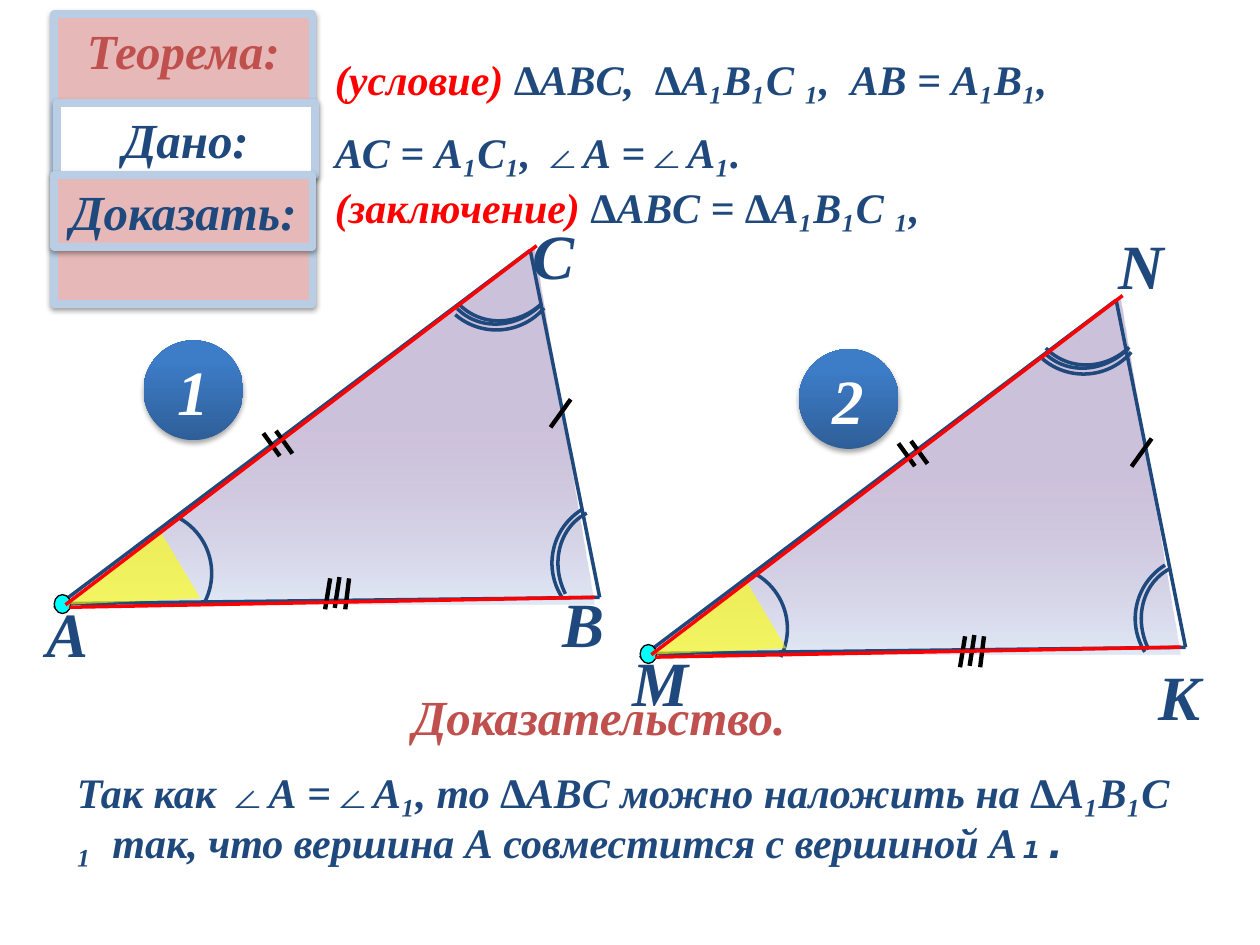
from lxml import etree
from pptx import Presentation
from pptx import util as u
from pptx.dml.color import RGBColor
from pptx.enum import shapes, text
from pptx.oxml.ns import qn

NAVY, RED, BRICK, BLACK = "1F497D", "FF0000", "C0504D", "000000"
PINK, WHITE, FRAME = "E6B9B8", "FFFFFF", "B9CDE5"
SERIF, MONO = "Times New Roman", "DejaVu Sans Mono"

HEADINGS = [
    ("Теорема:", (31, 8), PINK, BRICK),
    ("Дано:", (32.4, 59), WHITE, NAVY),
    ("Доказать:", (31, 100), PINK, NAVY),
]
CONDITION = [
    [("(условие) ", RED), ("∆АВC,  ∆А₁В₁С ₁,  АВ = А₁В₁,", NAVY)],
    [("АС = А₁С₁, ∠А =∠А₁.", NAVY)],
]
CONCLUSION = [[("(заключение) ", RED), ("∆АВC = ∆А₁В₁С ₁,", NAVY)]]
PROOF_TITLE = [[("Доказательство.", BRICK)]]
PROOF = [[
    ("Так как ∠А =∠А₁, то ∆АВC можно наложить на ∆А₁В₁С ₁  так, "
     "что вершина А совместится с вершиной А", NAVY),
    ("₁.", NAVY, MONO),
]]

SIDES = [((31, 345), (342.7, 341.4)), ((31, 347.5), (303, 143)), ((303, 143), (342.7, 341.4))]
RED_SIDES = [((339.8, 341.3), (39.6, 347)), ((37.4, 345.6), (306.7, 140.4))]
CORNER = [(92.2, 304.6), (36.7, 345.6), (114.5, 342)]

DOUBLE_TICK = [((0, 1.4), (9.4, 14.4)), ((7.2, 0), (16.6, 13))]
TRIPLE_TICK = [((2.9, 0.7), (0, 18.4)), ((8.2, 0), (5.5, 17.6)), ((13.7, 0.7), (11.5, 18.4))]
SINGLE_TICK = [((11.5, 0), (0, 16))]

ARC_A = [(0, 0, 72, 72, 26.8, None)]
ARCS_B = [(0, 0, 72, 72, 328.1, "flipH"), (4.3, 3.6, 63.4, 71.3, 333.2, "flipH")]
ARCS_C = [
    (0, 0, 72, 72, 40.8, "flipV"),
    (7.5, -0.7, 63.4, 71.3, 45.9, "flipV"),
    (6.5, -1.4, 65.5, 69.1, 45.9, "flipV"),
]

FIGURES = [
    {
        "offset": (0, 0),
        "number": ("1", (82, 194.5)),
        "labels": [("С", (297.4, 120.2)), ("В", (314.6, 330.5)), ("А", (19.4, 336.2))],
        "ticks": [(DOUBLE_TICK, (150.5, 246.2)), (TRIPLE_TICK, (185.8, 329.8)),
                  (SINGLE_TICK, (314.6, 228.2))],
        "arcs": [(ARC_A, (49, 291.6)), (ARCS_B, (315.4, 285.8)), (ARCS_C, (247.7, 116.6))],
    },
    {
        "offset": (334.8, 28.5),
        "number": ("2", (456.5, 199.5)),
        "labels": [("N", (632.2, 126)), ("K", (655.2, 372.2)), ("M", (354.2, 364.3))],
        "ticks": [(DOUBLE_TICK, (513.4, 252)), (TRIPLE_TICK, (548.6, 362.9)),
                  (SINGLE_TICK, (646.6, 250.6))],
        "arcs": [(ARC_A, (378, 323.3)), (ARCS_B, (648.7, 317.5)), (ARCS_C, (583.2, 141.8))],
    },
]

deck = Presentation()
deck.slide_width, deck.slide_height = u.Pt(720), u.Pt(540)
page = deck.slides.add_slide(deck.slide_layouts[1])


def colour(value):
    return RGBColor.from_string(value)


def points(values):
    return [u.Pt(value) for value in values]


def shift(point, offset):
    return point[0] + offset[0], point[1] + offset[1]


def place(box, frame):
    box.left, box.top, box.width, box.height = points(frame)


def write(box, paragraphs, size=24, align=text.PP_ALIGN.LEFT, anchor=text.MSO_ANCHOR.TOP,
          wrap=True, grow=False, gap=0):
    frame = box.text_frame
    frame.word_wrap = wrap
    frame.vertical_anchor = anchor
    frame.auto_size = text.MSO_AUTO_SIZE.SHAPE_TO_FIT_TEXT if grow else text.MSO_AUTO_SIZE.NONE
    for index, runs in enumerate(paragraphs):
        para = frame.add_paragraph() if index else frame.paragraphs[0]
        para.alignment = align
        para.space_before = u.Pt(gap if index else 0)
        for words, shade, *face in runs:
            span = para.add_run()
            span.text = words
            font = span.font
            font.name = face[0] if face else SERIF
            font.size, font.bold, font.italic = u.Pt(size), True, True
            font.color.rgb = colour(shade)


def add_text(frame, paragraphs, **style):
    write(page.shapes.add_textbox(*points(frame)), paragraphs, grow=True, **style)


def outline(shape, shade=None, width=2):
    if shade:
        shape.line.color.rgb = colour(shade)
        shape.line.width = u.Pt(width)
    else:
        shape.line.fill.background()


def cast_shadow(shape, distance, alpha):
    shape.shadow.inherit = False
    effects = shape._element.spPr.find(qn("a:effectLst"))
    shadow = etree.SubElement(effects, qn("a:outerShdw"), blurRad=str(u.Pt(3.1)),
                              dist=str(u.Pt(distance)), dir="5400000", rotWithShape="0")
    black = etree.SubElement(shadow, qn("a:srgbClr"), val=BLACK)
    etree.SubElement(black, qn("a:alpha"), val=str(alpha * 1000))


def add_shape(kind, frame):
    shape = page.shapes.add_shape(kind, *points(frame))
    shape.shadow.inherit = False
    return shape


def gradient(shape, stops, angle):
    shape.fill.gradient()
    shape.fill.gradient_angle = angle
    for stop, (position, shade) in zip(shape.fill.gradient_stops, stops):
        stop.position = position
        stop.color.rgb = colour(shade)


def fade(shape, alpha):
    first = next(shape._element.spPr.iter(qn("a:srgbClr")))
    etree.SubElement(first, qn("a:alpha"), val=str(alpha * 1000))


def add_lines(lines, offset, shade, width=2):
    for start, end in lines:
        ends = points(shift(start, offset) + shift(end, offset))
        line = page.shapes.add_connector(shapes.MSO_CONNECTOR.STRAIGHT, *ends)
        outline(line, shade, width)
        etree.SubElement(line._element.spPr, qn("a:effectLst"))


def add_arcs(arcs, origin):
    for x, y, width, height, turn, flip in arcs:
        arc = add_shape(shapes.MSO_SHAPE.ARC, (*shift((x, y), origin), width, height))
        arc.fill.background()
        outline(arc, NAVY)
        arc.rotation = turn
        if flip:
            arc._element.spPr.find(qn("a:xfrm")).set(flip, "1")


def add_figure(offset, number, labels, ticks, arcs):
    triangle = add_shape(shapes.MSO_SHAPE.ISOSCELES_TRIANGLE,
                         (*shift((36.7, 141.1), offset), 303.1, 204.5))
    triangle.adjustments[0] = 0.886
    gradient(triangle, [(0.51, "B3A2C7"), (1, "E1E8F5")], 270)
    fade(triangle, 65)
    outline(triangle)
    add_lines(SIDES, offset, NAVY)
    dot = add_shape(shapes.MSO_SHAPE.OVAL, (*shift((31, 339.8), offset), 9.4, 10.8))
    dot.fill.solid()
    dot.fill.fore_color.rgb = colour("00FFFF")
    outline(dot, BLACK, 0.75)
    for letter, corner in labels:
        add_text((*corner, 39, 51), [[(letter, NAVY)]], size=36, wrap=False)
    for lines, origin in ticks:
        add_lines(lines, origin, BLACK, 2.5)
    for group, origin in arcs:
        add_arcs(group, origin)
    start, *rest = [points(shift(point, offset)) for point in CORNER]
    builder = page.shapes.build_freeform(*start)
    builder.add_line_segments(rest, close=True)
    corner = builder.convert_to_shape()
    corner.shadow.inherit = False
    corner.fill.solid()
    corner.fill.fore_color.rgb = colour("FFFF00")
    fade(corner, 60)
    outline(corner)
    add_lines(RED_SIDES, offset, RED)
    digit, spot = number
    badge = add_shape(shapes.MSO_SHAPE.OVAL, (*spot, 57, 57))
    gradient(badge, [(0, "2F5F99"), (0.8, "3D7CC7")], 90)
    outline(badge)
    cast_shadow(badge, 1.8, 35)
    write(badge, [[(digit, WHITE)]], size=36, align=text.PP_ALIGN.CENTER,
          anchor=text.MSO_ANCHOR.MIDDLE)


def add_heading(box, words, corner, fill, shade):
    place(box, (*corner, 147.6, 41))
    box.fill.solid()
    box.fill.fore_color.rgb = colour(fill)
    outline(box, FRAME, 4.5)
    cast_shadow(box, 1.6, 38)
    write(box, [[(words, shade)]], size=28, align=text.PP_ALIGN.CENTER, grow=True)


add_heading(page.shapes.title, *HEADINGS[0])
for figure in FIGURES:
    add_figure(**figure)
for heading in HEADINGS[1:]:
    add_heading(add_shape(shapes.MSO_SHAPE.RECTANGLE, (0, 0, 10, 10)), *heading)

add_text((184.3, 26, 447.8, 80), CONDITION, anchor=text.MSO_ANCHOR.MIDDLE, gap=13)
add_text((184.3, 100, 362, 36), CONCLUSION, wrap=False)
add_text((227.5, 389, 229.7, 41), PROOF_TITLE, size=28, align=text.PP_ALIGN.CENTER, wrap=False)

body = page.placeholders[1]
place(body, (36.7, 434.2, 646.6, 94.3))
settings = body.text_frame.paragraphs[0]._p.get_or_add_pPr()
settings.set("marL", "0")
settings.set("indent", "0")
etree.SubElement(settings, qn("a:buNone"))
write(body, PROOF)

deck.save("out.pptx")
